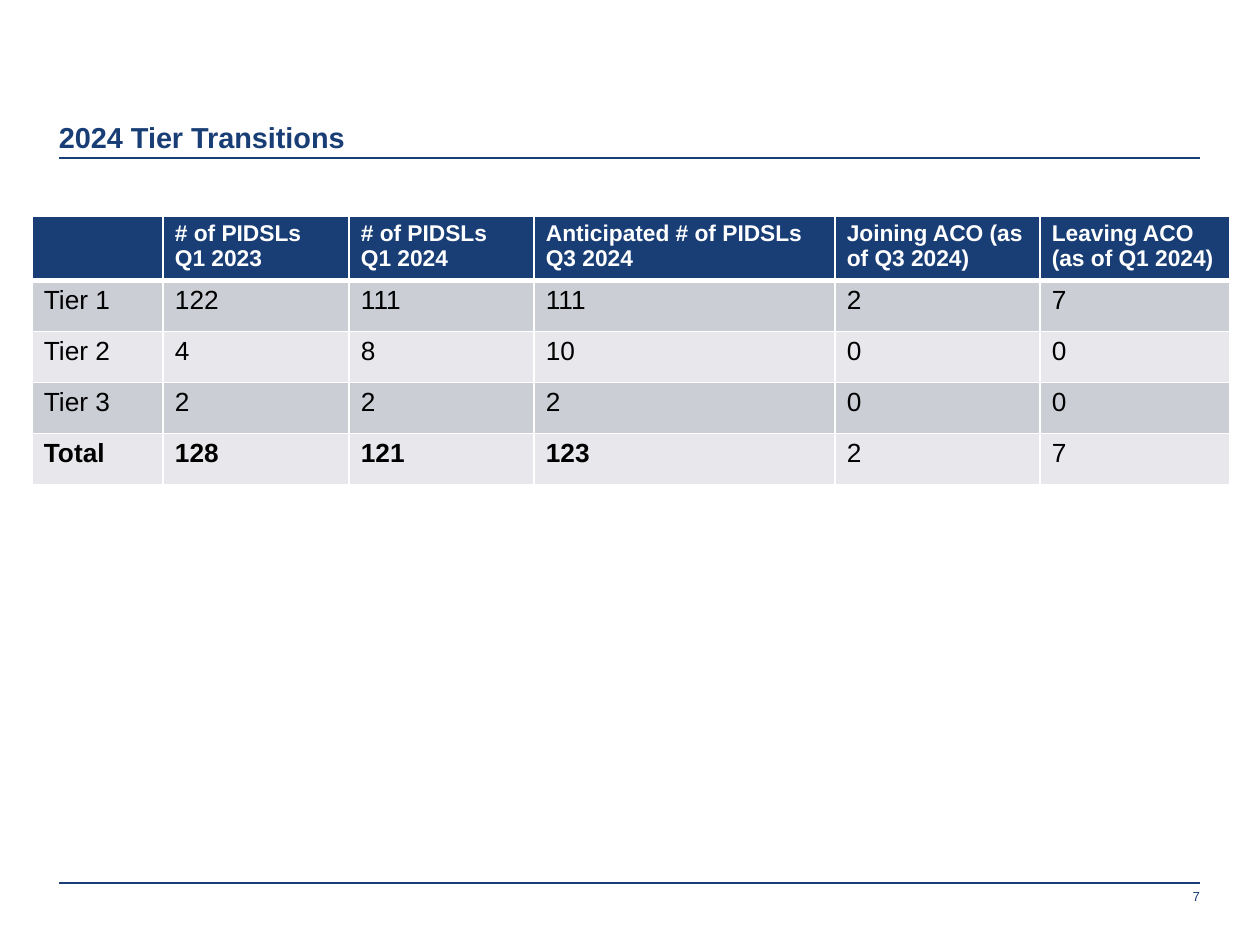
from pptx import Presentation, util as u
from pptx.dml.color import RGBColor
from pptx.enum import shapes, text
from pptx.oxml.ns import qn
from lxml import etree

PX_PER_INCH = 126
COLORS = {
    "navy": "183E75",
    "white": "FFFFFF",
    "black": "000000",
    "band_dark": "CCCED6",
    "band_light": "E8E8EC",
}


def px(length):
    return u.Emu(round(length * u.Inches(1) / PX_PER_INCH))


def rgb(name):
    return RGBColor.from_string(COLORS[name])


class Painter:
    font = "Arial"

    def __init__(self, page):
        self.page = page

    def span(self, para, words, size, color, bold=False):
        para.font.size = u.Pt(size)
        span = para.add_run()
        span.text = words
        span.font.name = self.font
        span.font.size = u.Pt(size)
        span.font.bold = bold
        span.font.color.rgb = rgb(color)

    def rule(self, left, right, y):
        line = self.page.shapes.add_connector(
            shapes.MSO_CONNECTOR.STRAIGHT, px(left), px(y), px(right), px(y))
        line.line.color.rgb = rgb("navy")
        line.line.width = u.Pt(0.75)
        etree.SubElement(line._element.spPr, qn("a:effectLst"))

    def label(self, area, words, size, align, anchor, bold=False):
        box = self.page.shapes.add_textbox(*map(px, area))
        frame = box.text_frame
        frame.word_wrap = True
        frame.vertical_anchor = anchor
        frame.margin_left = frame.margin_right = 0
        frame.margin_top = frame.margin_bottom = 0
        para = frame.paragraphs[0]
        para.alignment = align
        self.span(para, words, size, "navy", bold)

    def borders(self, cell, widths):
        props = cell._tc.get_or_add_tcPr()
        for index, (side, points) in enumerate(widths.items()):
            edge = etree.Element(qn(f"a:ln{side}"), w=str(u.Pt(points)))
            fill = etree.SubElement(edge, qn("a:solidFill"))
            etree.SubElement(fill, qn("a:srgbClr"), val=COLORS["white"])
            props.insert(index, edge)

    def cell(self, cell, words, size, color, fill, bold, widths):
        cell.fill.solid()
        cell.fill.fore_color.rgb = rgb(fill)
        cell.margin_left = cell.margin_right = px(12)
        cell.margin_top = cell.margin_bottom = px(5)
        para = cell.text_frame.paragraphs[0]
        if words:
            self.span(para, words, size, color, bold)
        else:
            para.font.size = u.Pt(size)
        self.borders(cell, widths)

    def table(self, left, top, columns, heights, rows):
        grid = self.page.shapes.add_table(
            len(rows), len(columns), px(left), px(top),
            px(sum(columns)), px(sum(heights))).table
        for column, width in zip(grid.columns, columns):
            column.width = px(width)
        for r, (height, row) in enumerate(zip(heights, rows)):
            grid.rows[r].height = px(height)
            for c, words in enumerate(row):
                widths = {"L": 1, "R": 1, "T": 3 if r == 1 else 1,
                          "B": 3 if r == 0 else 1}
                if r == 0:
                    style = (13, "white", "navy", True)
                else:
                    band = "band_dark" if r % 2 else "band_light"
                    total = row[0] == "Total" and c < 4
                    style = (15, "black", band, total)
                self.cell(grid.cell(r, c), words, *style, widths)


def main():
    deck = Presentation()
    deck.slide_width, deck.slide_height = u.Inches(10), u.Inches(7.5)
    painter = Painter(deck.slides.add_slide(deck.slide_layouts[6]))

    # Header and footer rules
    for y in (158, 883):
        painter.rule(59, 1200, y)

    # Page number and title
    painter.label((1091, 888, 109, 32), "7", 7.5,
                  text.PP_ALIGN.RIGHT, text.MSO_ANCHOR.TOP)
    painter.label((59, 49, 1141, 105), "2024 Tier Transitions", 16.5,
                  text.PP_ALIGN.LEFT, text.MSO_ANCHOR.BOTTOM, bold=True)

    # Tier counts
    rows = [
        ("", "# of PIDSLs Q1 2023", "# of PIDSLs Q1 2024",
         "Anticipated # of PIDSLs Q3 2024", "Joining ACO (as of Q3 2024)",
         "Leaving ACO (as of Q1 2024)"),
        ("Tier 1", "122", "111", "111", "2", "7"),
        ("Tier 2", "4", "8", "10", "0", "0"),
        ("Tier 3", "2", "2", "2", "0", "0"),
        ("Total", "128", "121", "123", "2", "7"),
    ]
    painter.table(32, 216, (131, 186, 185, 301, 205, 190),
                  [64] + [51] * 4, rows)

    deck.save("out.pptx")


if __name__ == "__main__":
    main()
